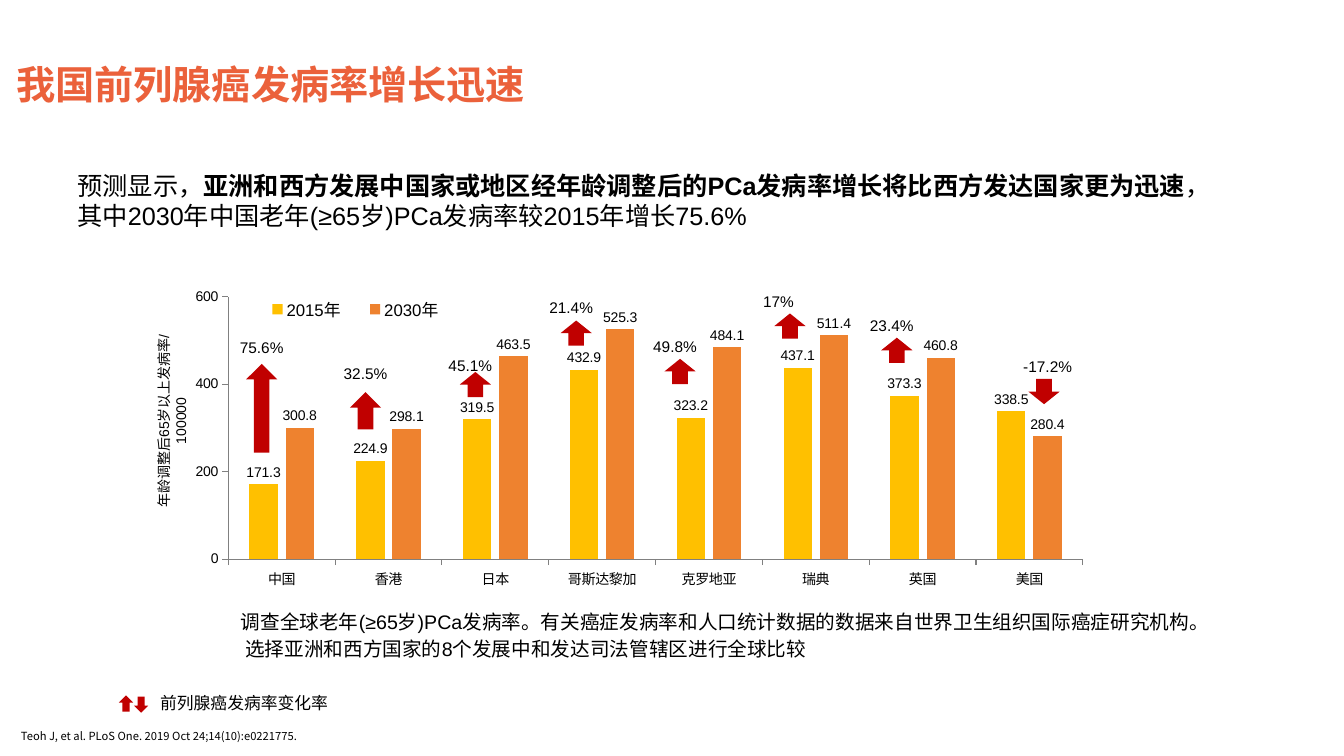
from dataclasses import dataclass

from lxml import etree
from pptx import Presentation
from pptx.chart.data import CategoryChartData
from pptx.dml.color import RGBColor
from pptx.enum.chart import XL_CHART_TYPE, XL_LABEL_POSITION, XL_LEGEND_POSITION, XL_TICK_MARK
from pptx.enum.shapes import MSO_SHAPE
from pptx.enum.text import MSO_ANCHOR, PP_ALIGN
from pptx.oxml import parse_xml
from pptx.oxml.ns import nsdecls, qn
from pptx.util import Inches, Pt

COLUMNS = XL_CHART_TYPE.COLUMN_CLUSTERED
OUTSIDE_END = XL_LABEL_POSITION.OUTSIDE_END
LEGEND_TOP = XL_LEGEND_POSITION.TOP
TICK_OUTSIDE = XL_TICK_MARK.OUTSIDE
UP_ARROW = MSO_SHAPE.UP_ARROW
MIDDLE = MSO_ANCHOR.MIDDLE
LEFT, CENTER = PP_ALIGN.LEFT, PP_ALIGN.CENTER


@dataclass(frozen=True)
class Theme:
    latin: str = "Arial"
    chinese: str = "Noto Sans CJK SC"
    heading: RGBColor = RGBColor(0xEB, 0x61, 0x3B)
    text: RGBColor = RGBColor(0, 0, 0)
    axis: RGBColor = RGBColor(0x80, 0x80, 0x80)
    change: RGBColor = RGBColor(0xC0, 0, 0)
    year_2015: RGBColor = RGBColor(0xFF, 0xC0, 0)
    year_2030: RGBColor = RGBColor(0xEE, 0x82, 0x2F)
    title_size: Pt = Pt(28)
    statement_size: Pt = Pt(18)
    note_size: Pt = Pt(14)
    key_size: Pt = Pt(12)
    change_size: Pt = Pt(11)
    chart_size: Pt = Pt(10)
    citation_size: Pt = Pt(8)


THEME = Theme()

prs = Presentation()
prs.slide_width, prs.slide_height = Inches(13.33), Inches(7.5)
slide = prs.slides.add_slide(prs.slide_layouts[5])


def write(shape, paragraphs, size, latin=THEME.latin, color=THEME.text):
    """Fill a shape with paragraphs, each a list of (text, bold) runs."""
    frame = shape.text_frame
    frame.word_wrap = True
    for index, runs in enumerate(paragraphs):
        paragraph = frame.add_paragraph() if index else frame.paragraphs[0]
        if index:
            paragraph.space_before = Pt(size.pt * 0.2)
        for text, bold in runs:
            run = paragraph.add_run()
            run.text = text
            run.font.name, run.font.size, run.font.bold = latin, size, bold
            run.font.color.rgb = color
            etree.SubElement(run.font._element, qn("a:ea"), typeface=THEME.chinese)


def add_change_arrow(left, top, width, height, rotation):
    arrow = slide.shapes.add_shape(
        UP_ARROW, Inches(left), Inches(top), Inches(width), Inches(height))
    arrow.rotation = rotation
    arrow.shadow.inherit = False
    arrow.fill.solid()
    arrow.fill.fore_color.rgb = THEME.change
    arrow.line.fill.background()


# Title
title = slide.shapes.title
title.left, title.top, title.width, title.height = (
    Inches(0.06), Inches(0.45), Inches(12), Inches(0.77))
write(title, [[("我国前列腺癌发病率增长迅速", True)]],
      THEME.title_size, THEME.chinese, THEME.heading)
title.text_frame.vertical_anchor = MIDDLE
title.text_frame.paragraphs[0].alignment = LEFT

# Statement, notes, citation and arrow key
texts = [
    (0.67, 1.64, 11.27, 1.01, THEME.statement_size, THEME.latin, [[
        ("预测显示，", False),
        ("亚洲和西方发展中国家或地区经年龄调整后的PCa发病率增长将比西方发达国家更为迅速", True),
        ("，其中2030年中国老年(≥65岁)PCa发病率较2015年增长75.6%", False)]]),
    (2.29, 6, 9.87, 0.51, THEME.note_size, THEME.latin, [
        [("调查全球老年(≥65岁)PCa发病率。有关癌症发病率和人口统计数据的数据来自世界卫生组织国际癌症研究机构。", False)],
        [(" 选择亚洲和西方国家的8个发展中和发达司法管辖区进行全球比较", False)]]),
    (0.11, 7.19, 8.63, 0.26, THEME.citation_size, THEME.chinese, [
        [("Teoh J, et al. PLoS One. 2019 Oct 24;14(10):e0221775.", False)]]),
    (1.49, 6.82, 4.43, 0.26, THEME.key_size, THEME.latin, [[("前列腺癌发病率变化率", False)]]),
]
for left, top, width, height, size, latin, paragraphs in texts:
    box = slide.shapes.add_textbox(Inches(left), Inches(top), Inches(width), Inches(height))
    write(box, paragraphs, size, latin)

add_change_arrow(1.33, 6.91, 0.14, 0.16, 180)
add_change_arrow(1.18, 6.9, 0.14, 0.16, 0)

# Incidence chart
incidence = CategoryChartData()
incidence.categories = ["中国", "香港", "日本", "哥斯达黎加", "克罗地亚", "瑞典", "英国", "美国"]
incidence.add_series("2015年", [171.3, 224.9, 319.5, 432.9, 323.2, 437.1, 373.3, 338.5])
incidence.add_series("2030年", [300.8, 298.1, 463.5, 525.3, 484.1, 511.4, 460.8, 280.4])
chart = slide.shapes.add_chart(
    COLUMNS, Inches(1.76), Inches(2.82), Inches(10.09), Inches(3.1), incidence).chart
chart.has_title = False
chart.has_legend = True
chart.legend.position = LEGEND_TOP
chart.legend.include_in_layout = False

plot = chart.plots[0]
plot.vary_by_categories = False
plot.gap_width, plot.overlap = 150, -28
for series, color in zip(plot.series, (THEME.year_2015, THEME.year_2030)):
    series.format.fill.solid()
    series.format.fill.fore_color.rgb = color
    labels = series.data_labels
    labels.show_value = True
    labels.position = OUTSIDE_END
    labels.font.size = THEME.chart_size

rates, places = chart.value_axis, chart.category_axis
rates.minimum_scale, rates.maximum_scale, rates.major_unit = 0, 600, 200
rates.has_major_gridlines = False
for axis in (rates, places):
    axis.major_tick_mark = TICK_OUTSIDE
    axis.format.line.color.rgb = THEME.axis
    axis.tick_labels.font.size = THEME.chart_size
chart.legend.font.size = THEME.key_size
for font in (chart.font, chart.legend.font, rates.tick_labels.font, places.tick_labels.font,
             *(series.data_labels.font for series in plot.series)):
    font.name = THEME.latin
    font.color.rgb = THEME.text

# Plot and legend positions, as fractions of the chart
plot_area = chart._chartSpace.chart.plotArea
legend = chart.legend._element
for parent, index, target, x, y, w, h in [
    (plot_area, 0, '<c:layoutTarget val="inner"/>', 0.05, 0.04, 0.84, 0.84),
    (legend, 1, "", 0.07, 0.03, 0.21, 0.1),
]:
    for old_layout in parent.findall(qn("c:layout")):
        parent.remove(old_layout)
    parent.insert(index, parse_xml(
        f'<c:layout {nsdecls("c")}><c:manualLayout>{target}'
        '<c:xMode val="edge"/><c:yMode val="edge"/>'
        f'<c:x val="{x}"/><c:y val="{y}"/><c:w val="{w}"/><c:h val="{h}"/>'
        '</c:manualLayout></c:layout>'))

# Rate axis caption
caption = slide.shapes.add_textbox(Inches(0.47), Inches(4.04), Inches(2.31), Inches(0.27))
caption.rotation = 270
write(caption, [[("年龄调整后65岁以上发病率/100000", False)]], THEME.chart_size)
caption.text_frame.paragraphs[0].alignment = CENTER

# Change per place: text, label left and top, arrow left, top and height
changes = [
    ("75.6%", 2.28, 3.31, 2.44, 3.61, 0.88),
    ("32.5%", 3.31, 3.56, 3.47, 3.89, 0.37),
    ("45.1%", 4.35, 3.48, 4.56, 3.69, 0.25),
    ("21.4%", 5.35, 2.91, 5.56, 3.18, 0.25),
    ("49.8%", 6.38, 3.29, 6.59, 3.56, 0.25),
    ("17%", 7.47, 2.85, 7.68, 3.11, 0.25),
    ("23.4%", 8.53, 3.09, 8.74, 3.35, 0.25),
    ("-17.2%", 10.05, 3.49, 10.2, 3.76, 0.25),
]
for change, label_left, label_top, arrow_left, arrow_top, arrow_height in changes:
    rotation = 180 if change.startswith("-") else 0
    add_change_arrow(arrow_left, arrow_top, 0.31, arrow_height, rotation)
    label = slide.shapes.add_textbox(
        Inches(label_left), Inches(label_top), Inches(0.74), Inches(0.28))
    write(label, [[(change, False)]], THEME.change_size)

prs.save("out.pptx")
